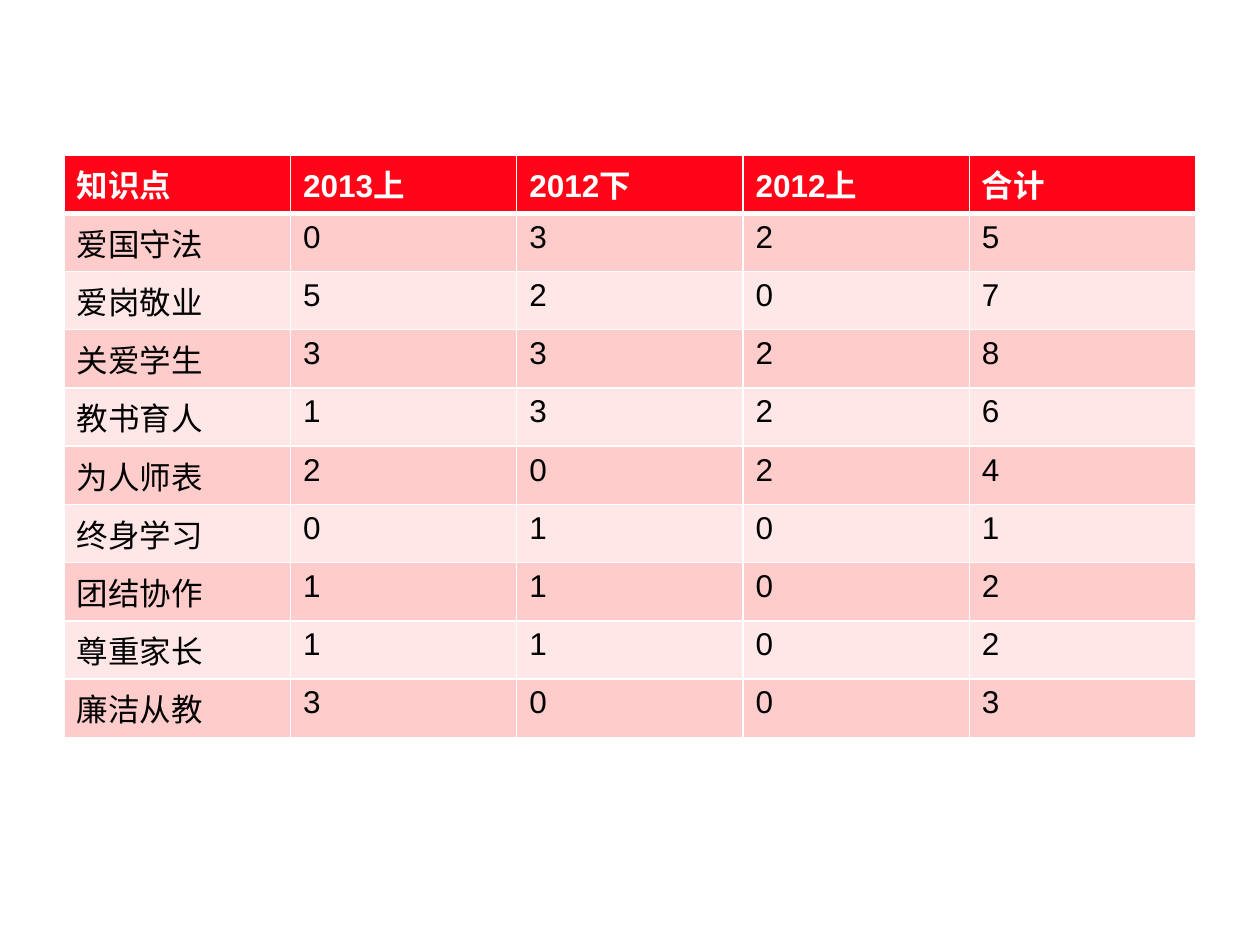
from lxml.etree import SubElement as Sub
from pptx import Presentation as Deck
from pptx.dml.color import RGBColor as RGB
from pptx.oxml.ns import qn
from pptx.util import Inches, Pt

WHITE = RGB(0xFF, 0xFF, 0xFF)
BLACK = RGB(0, 0, 0)
RED = RGB(0xFF, 0x05, 0x17)
ROSE = RGB(0xFF, 0xCC, 0xCC)
BLUSH = RGB(0xFF, 0xE7, 0xE8)

HEAD = ["知识点", "2013上", "2012下", "2012上", "合计"]
TOPICS = [
    ("爱国守法", 0, 3, 2),
    ("爱岗敬业", 5, 2, 0),
    ("关爱学生", 3, 3, 2),
    ("教书育人", 1, 3, 2),
    ("为人师表", 2, 0, 2),
    ("终身学习", 0, 1, 0),
    ("团结协作", 1, 1, 0),
    ("尊重家长", 1, 1, 0),
    ("廉洁从教", 3, 0, 0),
]


def put_text(cell, text, size=18, color=BLACK, bold=False):
    para = cell.text_frame.paragraphs[0]
    run = para.add_run()
    run.text = str(text)
    font = run.font
    font.name = "Arial"
    font.size = Pt(size)
    font.bold = bold
    font.color.rgb = color


def set_edge(cell, side, width):
    props = cell._tc.get_or_add_tcPr()
    line = Sub(props, qn(f"a:ln{side}"), w=str(Pt(width)))
    fill = Sub(line, qn("a:solidFill"))
    Sub(fill, qn("a:srgbClr"), val=str(WHITE))


def style_cell(cell, row):
    widths = {"L": 1, "R": 1, "T": 3 if row == 1 else 1, "B": 3 if row == 0 else 1}
    for side, width in widths.items():
        set_edge(cell, side, width)
    cell.fill.solid()
    cell.fill.fore_color.rgb = RED if row == 0 else ROSE if row % 2 else BLUSH


def add_scores(slide):
    rows = [HEAD] + [[name, *counts, sum(counts)] for name, *counts in TOPICS]
    frame = slide.shapes.add_table(
        len(rows), len(HEAD), Inches(0.51), Inches(1.23), Inches(8.98), Inches(4.06))
    table = frame.table
    for i, row in enumerate(rows):
        for j, text in enumerate(row):
            cell = table.cell(i, j)
            style_cell(cell, i)
            put_text(cell, text, color=BLACK if i else WHITE, bold=i == 0)


def main():
    """Build the slide that counts exam questions by topic."""
    deck = Deck()
    deck.slide_width, deck.slide_height = Inches(10), Inches(7.5)
    add_scores(deck.slides.add_slide(deck.slide_layouts[6]))
    deck.save("out.pptx")


if __name__ == "__main__":
    main()
